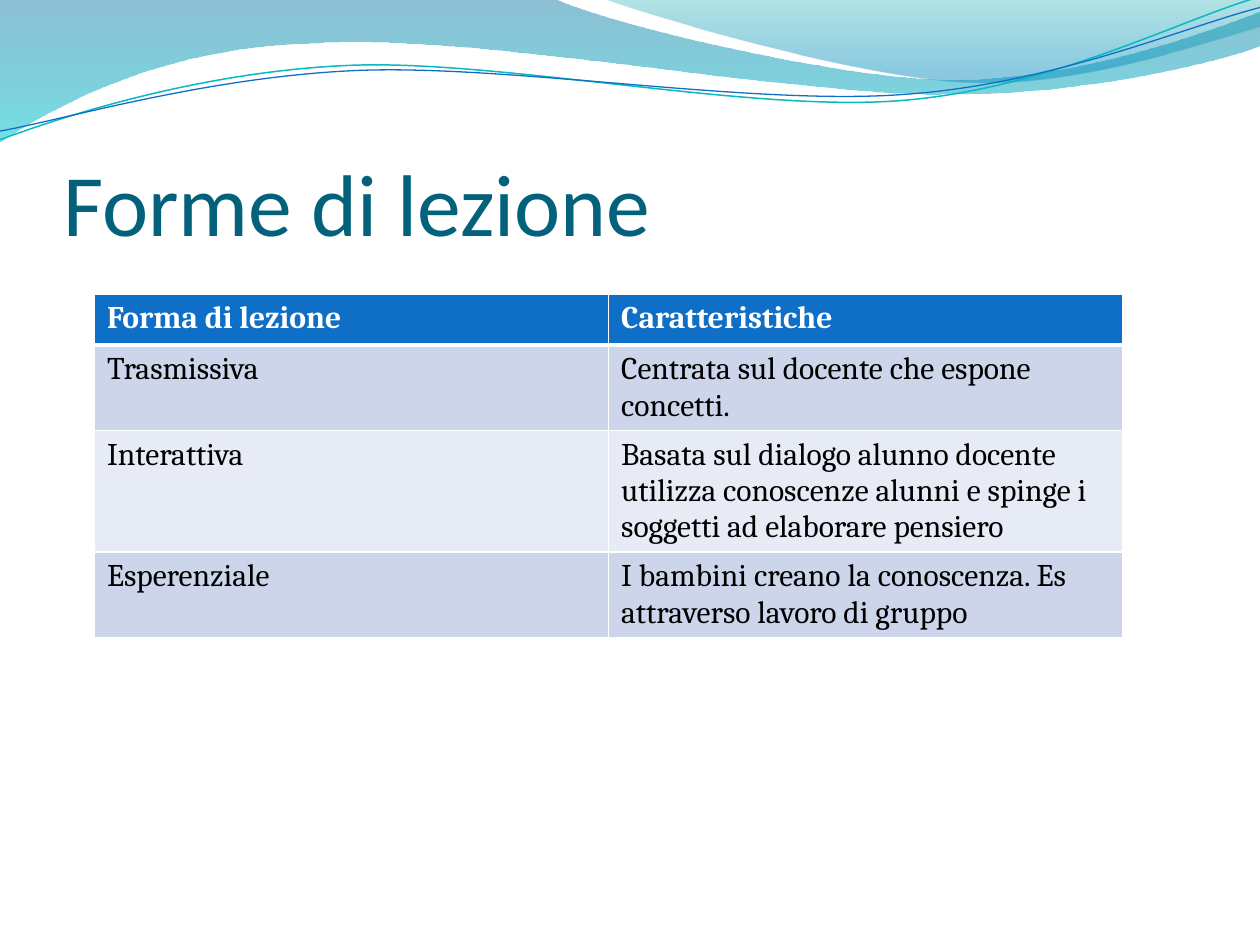
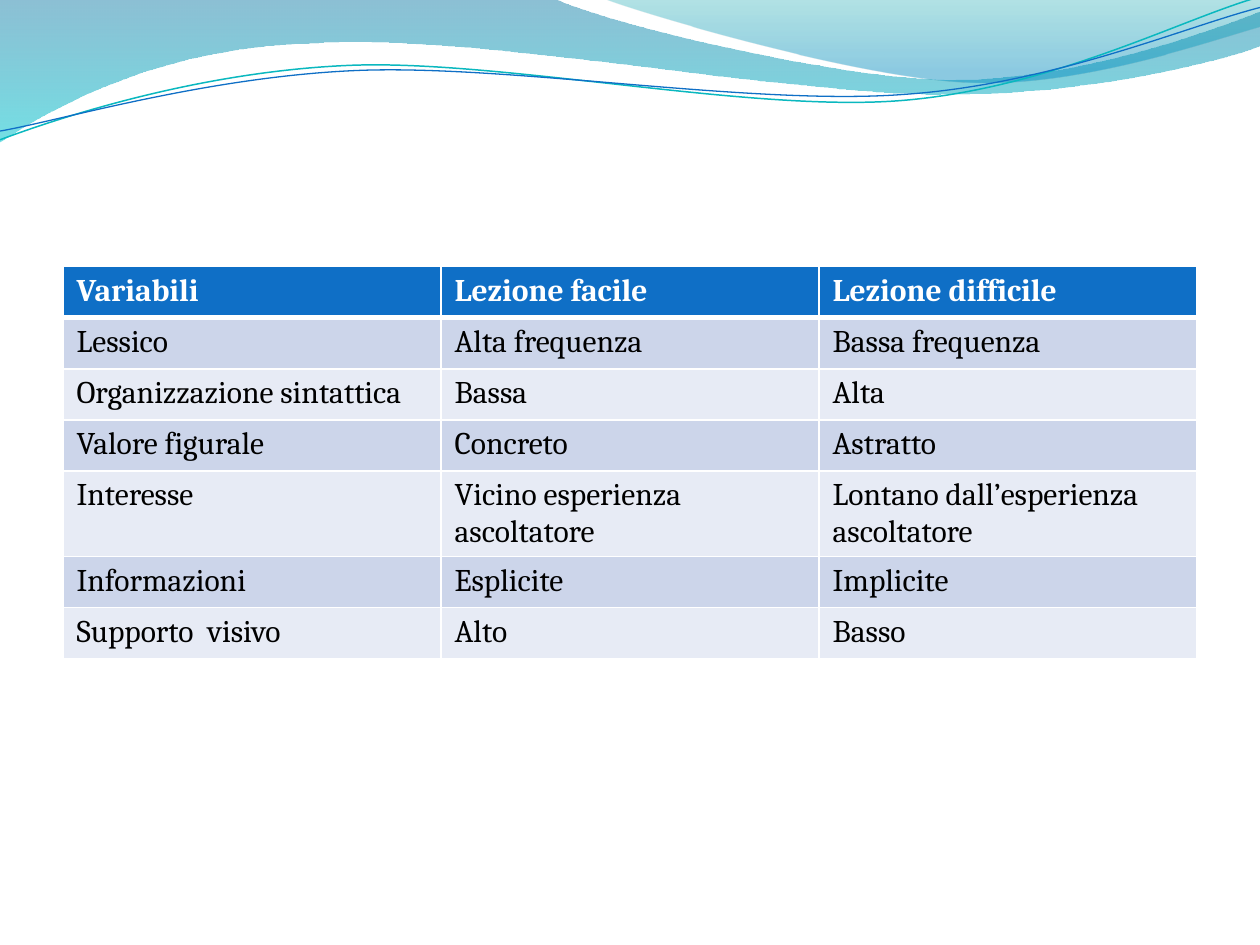
import math

import pptx
import pptx.dml.color
import pptx.enum.text
import pptx.oxml.ns
import pptx.util
from lxml import etree

Pt = pptx.util.Pt
qn = pptx.oxml.ns.qn

BLUE, TEAL, WHITE, BLACK = "0F6FC6", "0AB8BF", "FFFFFF", "000000"
TITLE_COLOR = "04617B"
BANDS = ["CCD5EA", "E7EBF5"]
TITLE_FONT, BODY_FONT = "Calibri", "Cambria"
ROW_HEIGHT = 29.2
LINE_TILT = -2.7

# Each segment holds one end point, or two control points and an end point.
WAVES = [
    {"start": (0, 0),
     "segments": [[(316.8, -0.7)],
                  [(342.7, 12.2), (478.1, 45.4), (545.8, 45.4)],
                  [(614.2, 45.4), (689.8, 18.7), (720, 6.5)],
                  [(720.7, 25.9)],
                  [(707.8, 31.7), (626.4, 54.7), (537.1, 54)],
                  [(447.8, 54), (275, 20.2), (185, 24.5)],
                  [(92.9, 25.9), (33.1, 59.8), (-0.7, 81.4)],
                  [(0, 0)]],
     "gradient": [(0, "0074A1", 45), (1, "00C6CF", 55)]},
    {"start": (344.9, -0.7),
     "segments": [[(366.5, 7.9), (491, 44.6), (553.7, 46.8)],
                  [(616.3, 49.7), (691.9, 23), (720, 15.1)],
                  [(720, 0)],
                  [(344.9, -0.7)]],
     "gradient": [(0, "00A1A9", 30), (0.8, "008BBF", 45)]},
    {"start": (0, 79.9),
     "segments": [[(34.6, 67), (113.8, 41), (199.4, 37.4)],
                  [(284.4, 33.8), (427, 64.1), (513.4, 57.6)],
                  [(599.8, 51.1), (675.4, 10.8), (718.6, -1.4)]],
     "line": (TEAL, 0.85), "pivot": (359.6, 41.4)},
    {"start": (0, 74.9),
     "segments": [[(33.8, 69.1), (118.1, 43.9), (203.8, 40.3)],
                  [(290.2, 36.7), (429.8, 60.5), (516.2, 54)],
                  [(601.9, 48.2), (677.5, 15.1), (720, 4.3)]],
     "line": (BLUE, 0.75), "pivot": (359.6, 42.5)},
]

SLIDES = [
    {"title": "Forme di lezione",
     "at": (54, 168), "size": (587.6, 202.3), "inset": 7.2,
     "rows": [
         ("Forma di lezione", "Caratteristiche"),
         ("Trasmissiva", "Centrata sul docente che espone concetti."),
         ("Interattiva", "Basata sul dialogo alunno docente utilizza conoscenze "
                         "alunni e spinge i soggetti ad elaborare pensiero"),
         ("Esperenziale", "I bambini creano la conoscenza. Es attraverso lavoro di gruppo"),
     ]},
    {"title": None,
     "at": (36, 152.4), "size": (648, 225.4), "inset": 7.8,
     "rows": [
         ("Variabili", "Lezione facile", "Lezione difficile"),
         ("Lessico", "Alta frequenza", "Bassa frequenza"),
         ("Organizzazione sintattica", "Bassa", "Alta"),
         ("Valore figurale", "Concreto", "Astratto"),
         ("Interesse", "Vicino esperienza ascoltatore", "Lontano dall’esperienza ascoltatore"),
         ("Informazioni", "Esplicite", "Implicite"),
         ("Supporto  visivo", "Alto", "Basso"),
     ]},
]


def rgb(value):
    return pptx.dml.color.RGBColor.from_string(value)


def add_run(p, text, font, size, color, bold=False):
    r = p.add_run()
    r.text = text
    r.font.name, r.font.size, r.font.bold = font, Pt(size), bold
    r.font.color.rgb = rgb(color)


def turn(point, pivot, degrees):
    angle = math.radians(degrees)
    x, y = point[0] - pivot[0], point[1] - pivot[1]
    return (pivot[0] + x * math.cos(angle) - y * math.sin(angle),
            pivot[1] + x * math.sin(angle) + y * math.cos(angle))


def bend(sp, segments):
    steps = iter(list(sp._element.iter(qn("a:lnTo"))))
    for segment in segments:
        nodes = [next(steps) for _ in segment]
        if len(segment) == 3:
            curve = etree.Element(qn("a:cubicBezTo"))
            nodes[0].addprevious(curve)
            for node in nodes:
                curve.append(node[0])
                node.getparent().remove(node)


def add_wave(s, wave):
    points = [wave["start"]] + sum(wave["segments"], [])
    if "pivot" in wave:
        points = [turn(point, wave["pivot"], -LINE_TILT) for point in points]
    points = [(Pt(x), Pt(y)) for x, y in points]
    builder = s.shapes.build_freeform(*points[0])
    builder.add_line_segments(points[1:], close="gradient" in wave)
    sp = builder.convert_to_shape()
    bend(sp, wave["segments"])
    sp.shadow.inherit = False
    if "line" in wave:
        color, width = wave["line"]
        sp.rotation = LINE_TILT
        sp.fill.background()
        sp.line.color.rgb = rgb(color)
        sp.line.width = Pt(width)
        return sp
    sp.line.fill.background()
    sp.fill.gradient()
    sp.fill.gradient_angle = 270
    for stop, (position, color, _) in zip(sp.fill.gradient_stops, wave["gradient"]):
        stop.position = position
        stop.color.rgb = rgb(color)
    colors = list(sp._element.spPr.iter(qn("a:srgbClr")))
    for node, (_, _, opacity) in zip(colors, wave["gradient"]):
        etree.SubElement(node, qn("a:alpha"), val=str(opacity * 1000))
    return sp


def decorate_master(prs, s):
    tree = prs.slide_master.shapes._spTree
    for i, wave in enumerate(WAVES):
        node = add_wave(s, wave)._element
        node.nvSpPr.cNvPr.set("id", str(100 + i))
        tree.insert(2 + i, node)


def set_borders(cell, row):
    widths = {"L": 1, "R": 1, "T": 1, "B": 3 if row == 0 else 1}
    if row == 1:
        del widths["T"]
    tcPr = cell._tc.get_or_add_tcPr()
    for i, (side, width) in enumerate(widths.items()):
        ln = etree.Element(qn("a:ln" + side), w=str(Pt(width)))
        fill = etree.SubElement(ln, qn("a:solidFill"))
        etree.SubElement(fill, qn("a:srgbClr"), val=WHITE)
        tcPr.insert(i, ln)


def set_title(s, text):
    sp = s.shapes.title
    if text is None:
        sp._element.getparent().remove(sp._element)
        return
    sp.left, sp.top, sp.width, sp.height = Pt(36), Pt(55.4), Pt(648), Pt(90)
    tf = sp.text_frame
    tf.auto_size = pptx.enum.text.MSO_AUTO_SIZE.NONE
    tf.vertical_anchor = pptx.enum.text.MSO_ANCHOR.BOTTOM
    tf.margin_left = tf.margin_right = tf.margin_bottom = 0
    tf.margin_top = Pt(3.6)
    p = tf.paragraphs[0]
    p.alignment = pptx.enum.text.PP_ALIGN.LEFT
    add_run(p, text, TITLE_FONT, 50, TITLE_COLOR)


def add_lesson_table(s, content):
    rows = content["rows"]
    (left, top), (width, height) = content["at"], content["size"]
    frame = s.shapes.add_table(len(rows), len(rows[0]), Pt(left), Pt(top),
                               Pt(width), Pt(ROW_HEIGHT * len(rows)))
    frame.height = Pt(height)
    for i, texts in enumerate(rows):
        header = i == 0
        for j, text in enumerate(texts):
            cell = frame.table.cell(i, j)
            cell.margin_left = cell.margin_right = Pt(content["inset"])
            cell.fill.solid()
            cell.fill.fore_color.rgb = rgb(BLUE if header else BANDS[(i - 1) % 2])
            set_borders(cell, i)
            add_run(cell.text_frame.paragraphs[0], text, BODY_FONT, 18,
                    WHITE if header else BLACK, header)


def main():
    prs = pptx.Presentation()
    prs.slide_width, prs.slide_height = Pt(720), Pt(540)
    for i, content in enumerate(SLIDES):
        s = prs.slides.add_slide(prs.slide_layouts.get_by_name("Title Only"))
        if i == 0:
            decorate_master(prs, s)
        set_title(s, content["title"])
        add_lesson_table(s, content)
    prs.save("out.pptx")


if __name__ == "__main__":
    main()
